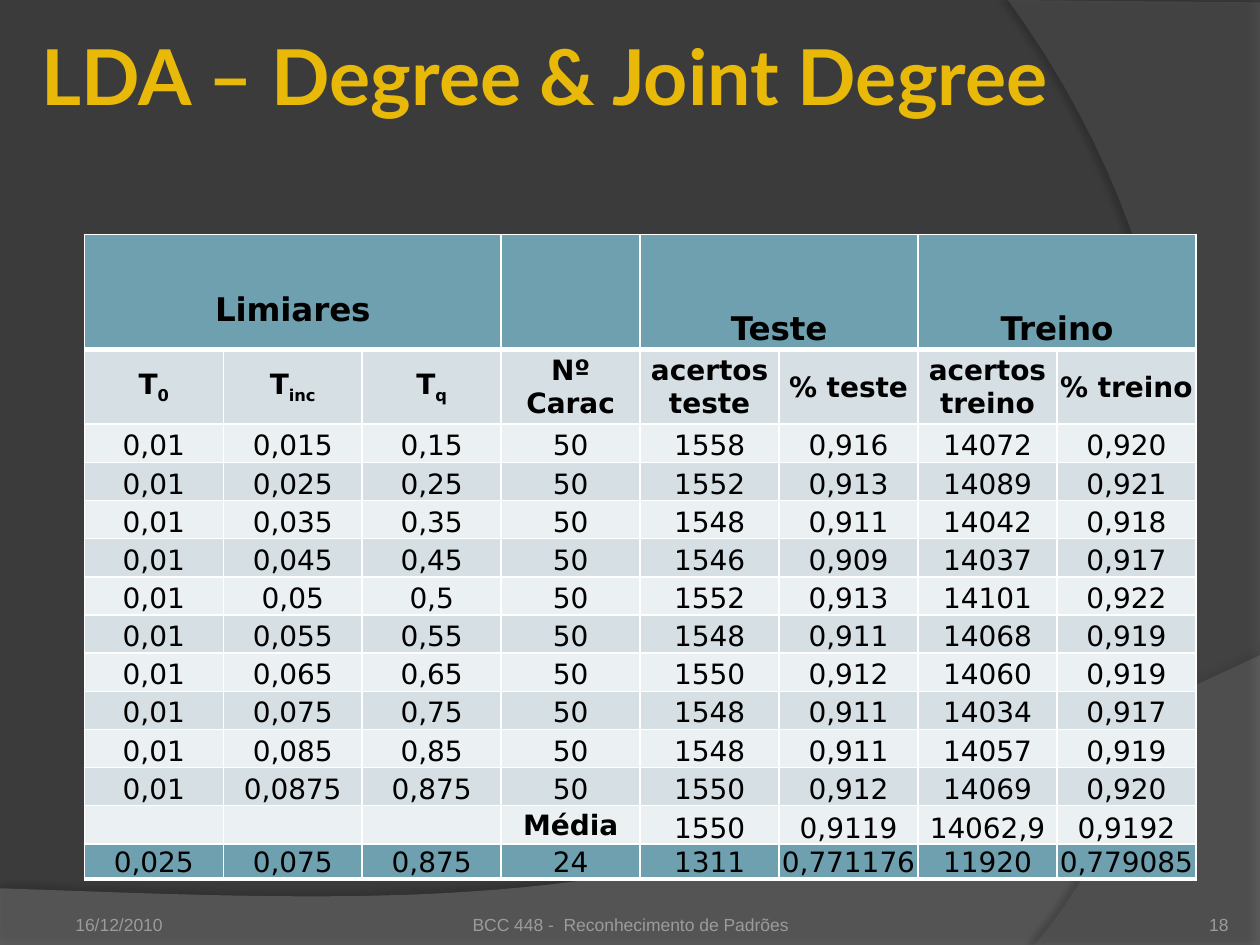
"""Builds the LDA results slide: a title, two result tables and a footer."""
from lxml import etree
from pptx import Presentation
from pptx.dml.color import RGBColor
from pptx.enum import text as t
from pptx.oxml import ns
from pptx.util import Pt

BACKGROUND = RGBColor(0x3B, 0x3B, 0x3B)
WAVE = RGBColor(0x7F, 0x7F, 0x7F)
ARC = RGBColor(0x5E, 0x5E, 0x5E)
GOLD = RGBColor(0xE9, 0xB9, 0x0A)
GREY = RGBColor(0x9D, 0x9B, 0x9A)
BLACK = RGBColor(0, 0, 0)
WHITE = RGBColor(0xFF, 0xFF, 0xFF)
TEAL = RGBColor(0x6E, 0xA0, 0xB0)
BANDS = RGBColor(0xD5, 0xDF, 0xE4), RGBColor(0xEB, 0xF0, 0xF2)

LEFT, CENTER, RIGHT = t.PP_ALIGN.LEFT, t.PP_ALIGN.CENTER, t.PP_ALIGN.RIGHT
MIDDLE, BOTTOM = t.MSO_ANCHOR.MIDDLE, t.MSO_ANCHOR.BOTTOM

TITLE = "LDA – Degree & Joint Degree"
FOOTERS = [
    ("16/12/2010", (36, 505.4, 167.8, 28.8), LEFT, 7.2),
    ("BCC 448 -  Reconhecimento de Padrões", (246.2, 505.4, 228.2, 28.8), CENTER, 0),
    ("18", (642.2, 505.4, 59.8, 28.8), RIGHT, 0),
]
GROUPS = [("Limiares", 0, 2, 0.7), ("", 3, 3, 0.7), ("Teste", 4, 5, 22), ("Treino", 6, 7, 22)]
HEADINGS = [("T", "0"), ("T", "inc"), ("T", "q"), ("Nº Carac", ""), ("acertos teste", ""),
            ("% teste", ""), ("acertos treino", ""), ("% treino", "")]
RESULTS = [
    ("0,01", "0,015", "0,15", "50", "1558", "0,916", "14072", "0,920"),
    ("0,01", "0,025", "0,25", "50", "1552", "0,913", "14089", "0,921"),
    ("0,01", "0,035", "0,35", "50", "1548", "0,911", "14042", "0,918"),
    ("0,01", "0,045", "0,45", "50", "1546", "0,909", "14037", "0,917"),
    ("0,01", "0,05", "0,5", "50", "1552", "0,913", "14101", "0,922"),
    ("0,01", "0,055", "0,55", "50", "1548", "0,911", "14068", "0,919"),
    ("0,01", "0,065", "0,65", "50", "1550", "0,912", "14060", "0,919"),
    ("0,01", "0,075", "0,75", "50", "1548", "0,911", "14034", "0,917"),
    ("0,01", "0,085", "0,85", "50", "1548", "0,911", "14057", "0,919"),
    ("0,01", "0,0875", "0,875", "50", "1550", "0,912", "14069", "0,920"),
    ("", "", "", "Média", "1550", "0,9119", "14062,9", "0,9192"),
]
BEST = ("0,025", "0,075", "0,875", "24", "1311", "0,771176", "11920", "0,779085")

TABLE_LEFT, COLUMN_WIDTH = 48.2, 79.4
GROUP_HEIGHT, HEADING_HEIGHT, RESULT_HEIGHT, BEST_HEIGHT = 64, 42.8, 21.82, 19.4

SWOOSHES = [
    ([(0, 507.6), (0, 540), (720, 540), (720, 374.4)],
     [(402.5, 524.9), (281.5, 517.7), (0, 507.6)], WAVE, 45, (35, 3.5, 270)),
    ([(576, 0), (720, 1.4), (720, 540), (591.1, 540)],
     [(673.2, 445.7), (733, 216), (576, 0)], ARC, 40, (45, 4, 180)),
]


def write(para, text, font="DejaVu Sans", size=16, color=BLACK, bold=False, align=CENTER, sub=False):
    para.alignment = align
    span = para.add_run()
    span.text = text
    span.font.name, span.font.size, span.font.bold = font, Pt(size), bold
    span.font.color.rgb = color
    if sub:
        span._r.get_or_add_rPr().set("baseline", "-25000")


def add_label(page, text, place, anchor, margins, **style):
    frame = page.shapes.add_textbox(*map(Pt, place)).text_frame
    frame.word_wrap, frame.vertical_anchor = True, anchor
    frame.margin_left, frame.margin_top, frame.margin_right, frame.margin_bottom = map(Pt, margins)
    write(frame.paragraphs[0], text, **style)


def bezier(start, first, second, end, steps=40):
    for step in range(1, steps + 1):
        f = step / steps
        weights = (1 - f) ** 3, 3 * f * (1 - f) ** 2, 3 * f * f * (1 - f), f ** 3
        yield tuple(sum(w * p[axis] for w, p in zip(weights, (start, first, second, end)))
                    for axis in (0, 1))


def add_swoosh(page, corners, curve, color, alpha, shadow):
    points = [(Pt(x), Pt(y)) for x, y in corners + list(bezier(corners[-1], *curve))]
    builder = page.shapes.build_freeform(*points[0])
    builder.add_line_segments(points[1:], close=True)
    shape = builder.convert_to_shape()
    shape.shadow.inherit = False
    shape.fill.solid()
    shape.fill.fore_color.rgb = color
    shape.line.fill.background()
    properties = shape._element.spPr
    fill = properties.find(ns.qn("a:solidFill"))[0]
    etree.SubElement(fill, ns.qn("a:alpha"), val=str(alpha * 1000))
    strength, distance, angle = shadow
    outer = etree.SubElement(properties.find(ns.qn("a:effectLst")), ns.qn("a:outerShdw"),
                             blurRad=str(Pt(4)), dist=str(Pt(distance)),
                             dir=str(angle * 60000), rotWithShape="0")
    shade = etree.SubElement(outer, ns.qn("a:srgbClr"), val=str(BLACK))
    etree.SubElement(shade, ns.qn("a:alpha"), val=str(strength * 1000))


def add_table(page, top, heights):
    frame = page.shapes.add_table(len(heights), 8, Pt(TABLE_LEFT), Pt(top),
                                  Pt(8 * COLUMN_WIDTH), Pt(sum(heights)))
    table = frame.table
    table.first_row = table.horz_banding = False
    for column in table.columns:
        column.width = Pt(COLUMN_WIDTH)
    for row, height in zip(table.rows, heights):
        row.height = Pt(height)
    return table


def dress(cell, fill, anchor=BOTTOM, top=0.7, under=1):
    for side, width in (("L", 1), ("R", 1), ("T", 1), ("B", under)):
        line = etree.SubElement(cell._tc.get_or_add_tcPr(), ns.qn("a:ln" + side), w=str(Pt(width)))
        etree.SubElement(etree.SubElement(line, ns.qn("a:solidFill")),
                         ns.qn("a:srgbClr"), val=str(WHITE))
    cell.fill.solid()
    cell.fill.fore_color.rgb = fill
    cell.vertical_anchor = anchor
    cell.margin_left = cell.margin_right = Pt(0.7)
    cell.margin_top, cell.margin_bottom = Pt(top), Pt(0)
    return cell.text_frame.paragraphs[0]


def add_results(page):
    heights = [GROUP_HEIGHT, HEADING_HEIGHT] + [RESULT_HEIGHT] * len(RESULTS)
    table = add_table(page, 133.9, heights)
    for name, first, last, top in GROUPS:
        for column in range(first, last + 1):
            para = dress(table.cell(0, column), TEAL, MIDDLE, top, under=3)
            if column == first:
                write(para, name, size=32, bold=True, sub=True)
        if last > first:
            table.cell(0, first).merge(table.cell(0, last))
    for column, (name, index) in enumerate(HEADINGS):
        para = dress(table.cell(1, column), BANDS[0], MIDDLE)
        write(para, name, bold=True)
        if index:
            write(para, index, bold=True, sub=True)
    for row, values in enumerate(RESULTS, 2):
        for column, value in enumerate(values):
            average = value == "Média"
            para = dress(table.cell(row, column), BANDS[(row + 1) % 2], MIDDLE if average else BOTTOM)
            write(para, value, bold=average)


def add_best(page):
    table = add_table(page, 482.4, [BEST_HEIGHT])
    for column, value in enumerate(BEST):
        write(dress(table.cell(0, column), TEAL, under=3), value)


def main():
    deck = Presentation()
    deck.slide_width, deck.slide_height = Pt(720), Pt(540)
    page = deck.slides.add_slide(deck.slide_layouts[6])
    page.background.fill.solid()
    page.background.fill.fore_color.rgb = BACKGROUND
    for swoosh in SWOOSHES:
        add_swoosh(page, *swoosh)
    add_label(page, TITLE, (20.2, -2.2, 680.4, 90), MIDDLE, [3.6] * 4,
              font="Lato", size=44, color=GOLD, bold=True, align=LEFT)
    for text, place, align, margin in FOOTERS:
        add_label(page, text, place, BOTTOM, (margin, 3.6, margin, 0),
                  font="Arial", size=10, color=GREY, align=align)
    add_results(page)
    add_best(page)
    deck.save("out.pptx")


if __name__ == "__main__":
    main()
